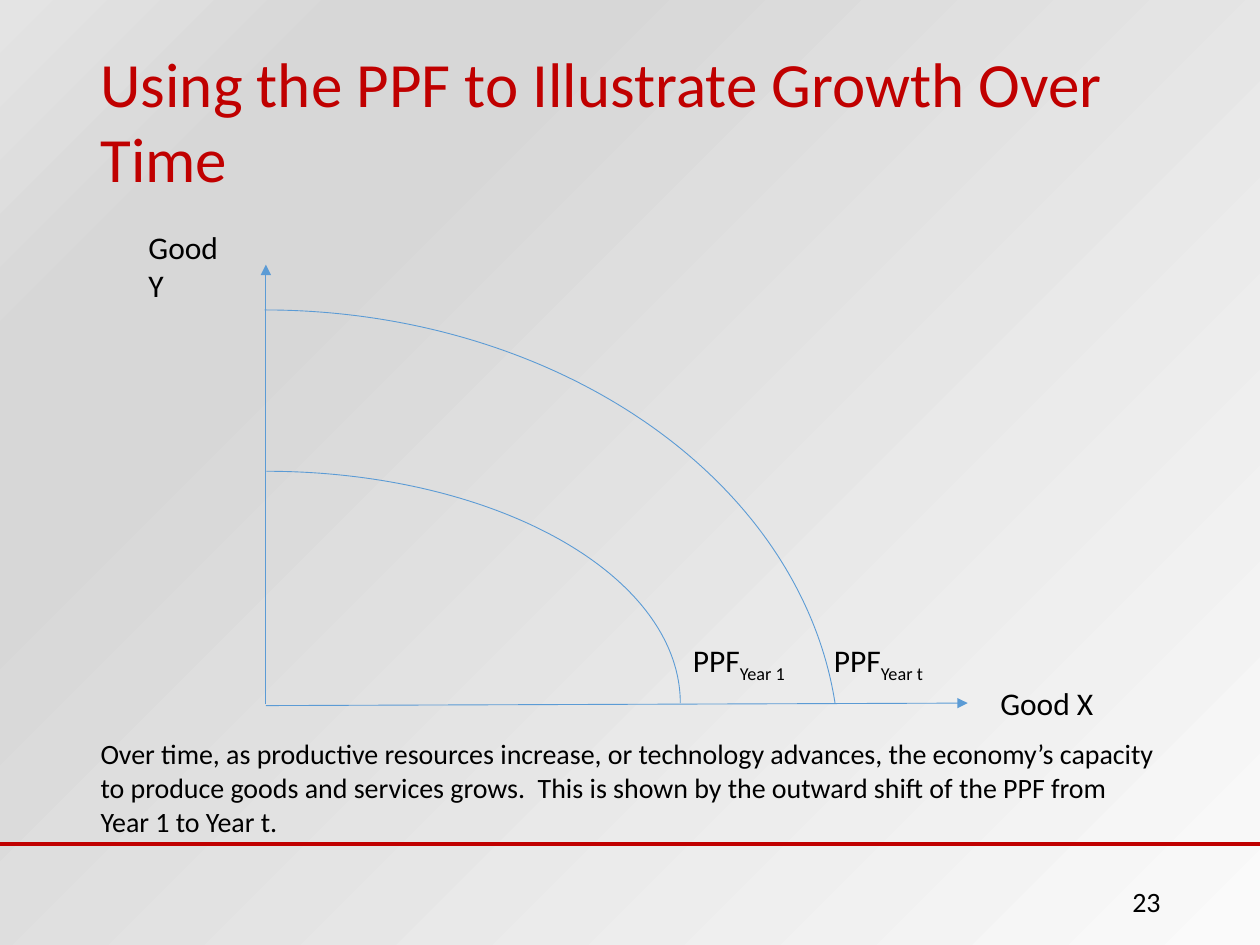
from dataclasses import dataclass
from typing import Optional

import pptx
import pptx.dml.color
import pptx.enum.shapes
import pptx.enum.text
import pptx.oxml
import pptx.oxml.ns
import pptx.util
from pptx.util import Inches

COLORS = {"red": "C00000", "blue": "5B9BD5", "black": "000000"}
BACKGROUND_STOPS = [(0, "FAFAFA"), (74, "D7D7D7"), (83, "D7D7D7"), (100, "E4E4E4")]
FONT = "Calibri"
ALIGN = pptx.enum.text.PP_ALIGN


@dataclass
class Label:
    text: str
    left: float
    top: float
    width: float
    height: float
    size: int = 18
    color: str = "black"
    subscript: str = ""
    align: pptx.enum.text.PP_ALIGN = ALIGN.LEFT
    middle: bool = False


@dataclass
class Line:
    start: tuple[float, float]
    end: tuple[float, float]
    color: str = "blue"
    weight: float = 0.5
    arrow: bool = True


@dataclass
class Frontier:
    left: float
    top: float
    width: float
    height: float
    angles: Optional[tuple[float, float]] = None


def rgb(name: str) -> pptx.dml.color.RGBColor:
    return pptx.dml.color.RGBColor.from_string(COLORS[name])


def paint_background(slide) -> None:
    """Radial gradient spreading from the bottom right corner."""
    slide.background.fill.gradient()
    gradient = slide.element.find(".//" + pptx.oxml.ns.qn("a:gradFill"))
    for child in list(gradient):
        gradient.remove(child)
    namespace = pptx.oxml.ns.nsdecls("a")
    stops = "".join(
        f'<a:gs pos="{pos * 1000}"><a:srgbClr val="{color}"/></a:gs>'
        for pos, color in BACKGROUND_STOPS
    )
    gradient.append(pptx.oxml.parse_xml(f"<a:gsLst {namespace}>{stops}</a:gsLst>"))
    gradient.append(pptx.oxml.parse_xml(
        f'<a:path {namespace} path="circle"><a:fillToRect l="100000" t="100000"/></a:path>'
    ))


def draw_line(slide, line: Line) -> None:
    connector = slide.shapes.add_connector(
        pptx.enum.shapes.MSO_CONNECTOR.STRAIGHT,
        *(Inches(value) for value in (*line.start, *line.end)),
    )
    connector.line.color.rgb = rgb(line.color)
    connector.line.width = pptx.util.Pt(line.weight)
    namespace = pptx.oxml.ns.nsdecls("a")
    if line.arrow:
        connector.line._get_or_add_ln().append(
            pptx.oxml.parse_xml(f'<a:tailEnd {namespace} type="triangle"/>')
        )
    connector._element.spPr.append(pptx.oxml.parse_xml(f"<a:effectLst {namespace}/>"))


def draw_frontier(slide, frontier: Frontier) -> None:
    arc = slide.shapes.add_shape(
        pptx.enum.shapes.MSO_SHAPE.ARC,
        Inches(frontier.left), Inches(frontier.top),
        Inches(frontier.width), Inches(frontier.height),
    )
    if frontier.angles:
        arc.adjustments[0], arc.adjustments[1] = frontier.angles
    arc.shadow.inherit = False
    arc.fill.background()
    arc.line.color.rgb = rgb("blue")
    arc.line.width = pptx.util.Pt(0.5)


def draw_label(slide, label: Label) -> None:
    box = slide.shapes.add_textbox(
        Inches(label.left), Inches(label.top), Inches(label.width), Inches(label.height)
    )
    frame = box.text_frame
    frame.word_wrap = True
    if label.middle:
        frame.vertical_anchor = pptx.enum.text.MSO_ANCHOR.MIDDLE
    frame.text = label.text
    paragraph = frame.paragraphs[0]
    paragraph.alignment = label.align
    if label.subscript:
        lowered = paragraph.add_run()
        lowered.text = label.subscript
        lowered.font._element.set("baseline", "-25000")
    for run in paragraph.runs:
        run.font.name = FONT
        run.font.size = pptx.util.Pt(label.size)
        run.font.color.rgb = rgb(label.color)


AXES = [
    Line((2.11, 5.6), (7.68, 5.58)),
    Line((2.11, 5.59), (2.11, 2.1)),
]
FOOTER_RULE = Line((0, 6.7), (10, 6.7), "red", 2, arrow=False)

FRONTIERS = [
    Frontier(-1.17, 3.74, 6.57, 3.68),
    Frontier(-2.46, 2.46, 9.12, 7.09, (162, 212.78)),
]

LABELS = [
    Label("Using the PPF to Illustrate Growth Over Time", 0.7, 0.3, 8.6, 1.31, 36, "red"),
    Label("Good Y", 1.08, 1.76, 0.87, 0.71),
    Label("Good X", 7.84, 5.38, 1.25, 0.4),
    Label("PPF", 5.4, 5.04, 1.1, 0.34, subscript="Year 1"),
    Label("PPF", 6.52, 5.04, 1.1, 0.34, subscript="Year t"),
    Label(
        "Over time, as productive resources increase, or technology advances, "
        "the economy’s capacity to produce goods and services grows.  This is shown "
        "by the outward shift of the PPF from Year 1 to Year t.",
        0.7, 5.8, 8.6, 0.91, 16,
    ),
    Label("23", 7.06, 6.95, 2.25, 0.4, 16, align=ALIGN.RIGHT, middle=True),
]


def main() -> None:
    deck = pptx.Presentation()
    deck.slide_width, deck.slide_height = Inches(10), Inches(7.5)
    slide = deck.slides.add_slide(deck.slide_layouts[6])
    paint_background(slide)

    # Axes and production possibility frontiers
    for axis in AXES:
        draw_line(slide, axis)
    for frontier in FRONTIERS:
        draw_frontier(slide, frontier)

    # Footer rule, then all wording
    draw_line(slide, FOOTER_RULE)
    for label in LABELS:
        draw_label(slide, label)

    deck.save("out.pptx")


if __name__ == "__main__":
    main()
